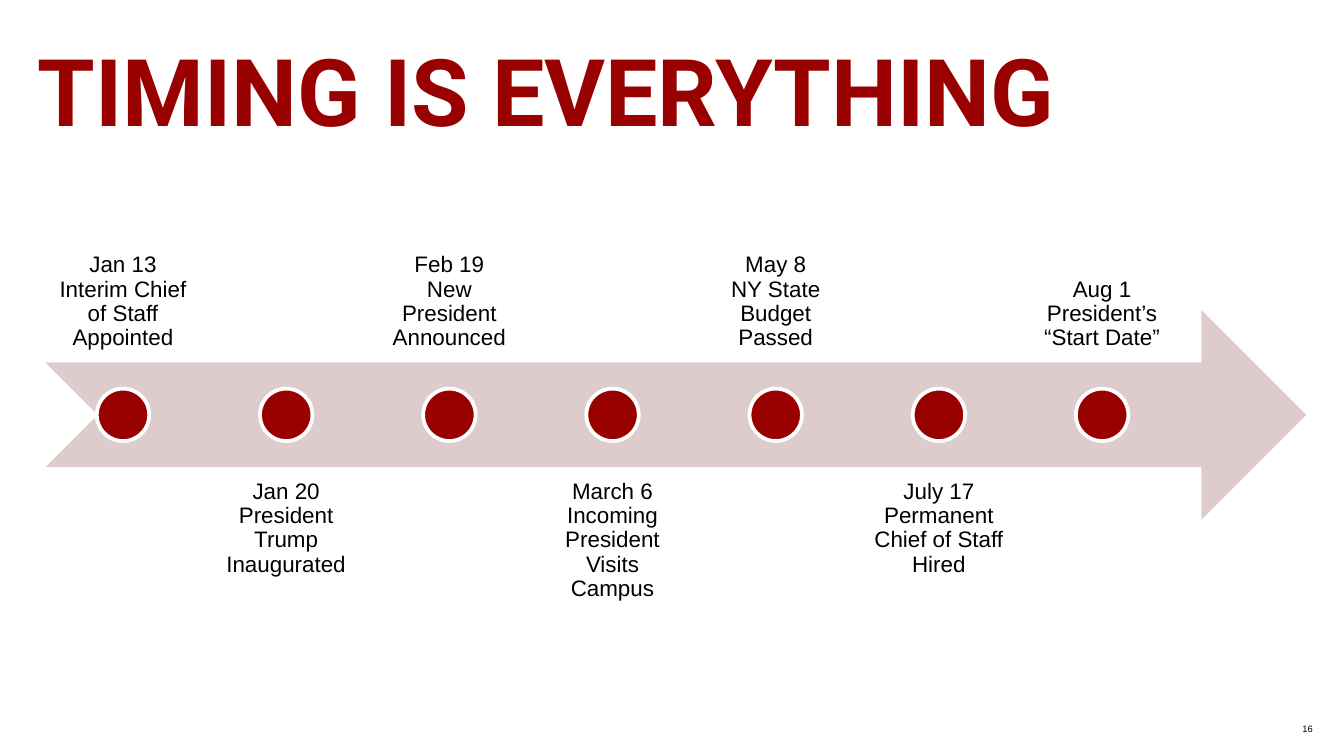
from dataclasses import dataclass
from pptx import Presentation
from pptx.dml.color import RGBColor
from pptx.enum.shapes import MSO_SHAPE
from pptx.enum.text import MSO_ANCHOR, MSO_AUTO_SIZE, PP_ALIGN
from pptx.shapes.autoshape import Shape
from pptx.slide import Slide
from pptx.util import Pt

ARROW = MSO_SHAPE.NOTCHED_RIGHT_ARROW
OVAL = MSO_SHAPE.OVAL
TOP, BOTTOM = MSO_ANCHOR.TOP, MSO_ANCHOR.BOTTOM
LEFT, CENTER = PP_ALIGN.LEFT, PP_ALIGN.CENTER
FIXED = MSO_AUTO_SIZE.NONE

COLORS = {"red": "990000", "band": "DECCCC", "white": "FFFFFF", "black": "000000"}

START, STEP = 24.15, 87.42
WIDTH, HEIGHT = 83.5, 112.3
UPPER, LOWER = 82.1, 250.6
DOT, DOT_TOP = 28.1, 208.2


@dataclass
class Event:
    date: str
    label: str


@dataclass
class Style:
    font: str
    size: float
    color: str
    bold: bool = False
    align: PP_ALIGN = CENTER


EVENTS = [
    Event("Jan 13", "Interim Chief of Staff Appointed"),
    Event("Jan 20", "President Trump Inaugurated"),
    Event("Feb 19", "New President Announced"),
    Event("March 6", "Incoming President Visits Campus"),
    Event("May 8", "NY State Budget Passed"),
    Event("July 17", "Permanent Chief of Staff Hired"),
    Event("Aug 1", "President’s “Start Date”"),
]

TITLE = Style("Roboto", 50, "red", True, LEFT)
LABEL = Style("Arial", 12, "black")
NUMBER = Style("Arial", 5, "black")


def tint(name: str) -> RGBColor:
    return RGBColor.from_string(COLORS[name])


def write(box: Shape, lines: list[str], style: Style, anchor: MSO_ANCHOR,
          insets: tuple[float, float, float, float]) -> None:
    frame = box.text_frame
    frame.word_wrap = True
    frame.auto_size = FIXED
    frame.vertical_anchor = anchor
    frame.margin_left, frame.margin_top, frame.margin_right, frame.margin_bottom = map(Pt, insets)
    para = frame.paragraphs[0]
    para.alignment = style.align
    for index, line in enumerate(lines):
        if index:
            para.add_line_break()
        run = para.add_run()
        run.text = line
        run.font.name = style.font
        run.font.size = Pt(style.size)
        run.font.bold = style.bold
        run.font.color.rgb = tint(style.color)


def draw_shape(slide: Slide, kind: MSO_SHAPE, left: float, top: float,
               width: float, height: float, fill: str) -> Shape:
    shape = slide.shapes.add_shape(kind, Pt(left), Pt(top), Pt(width), Pt(height))
    shape.shadow.inherit = False
    shape.fill.solid()
    shape.fill.fore_color.rgb = tint(fill)
    shape.line.fill.background()
    return shape


def draw_event(slide: Slide, index: int, event: Event) -> None:
    left = START + index * STEP
    top, anchor = (LOWER, TOP) if index % 2 else (UPPER, BOTTOM)
    box = slide.shapes.add_textbox(Pt(left), Pt(top), Pt(WIDTH), Pt(HEIGHT))
    write(box, [event.date, event.label], LABEL, anchor, (6.7, 6.7, 6.7, 6.7))
    para = box.text_frame.paragraphs[0]
    para.line_spacing = 0.9
    para.space_after = Pt(4.2)
    dot = draw_shape(slide, OVAL, left + (WIDTH - DOT) / 2, DOT_TOP, DOT, DOT, "red")
    dot.line.color.rgb = tint("white")
    dot.line.width = Pt(2)


def main() -> None:
    deck = Presentation()
    deck.slide_width, deck.slide_height = Pt(720), Pt(405)
    slide = deck.slides.add_slide(deck.slide_layouts[5])

    title = slide.shapes.title
    title.left, title.top, title.width, title.height = Pt(20.2), Pt(8.6), Pt(684.7), Pt(72.7)
    write(title, ["TIMING IS EVERYTHING"], TITLE, BOTTOM, (0, 3.6, 7.2, 3.6))

    draw_shape(slide, ARROW, 24.3, 166.1, 675.5, HEIGHT, "band")
    for index, event in enumerate(EVENTS):
        draw_event(slide, index, event)

    page = slide.shapes.add_textbox(Pt(684), Pt(385.2), Pt(33.1), Pt(9.4))
    write(page, ["16"], NUMBER, BOTTOM, (1.4, 1.4, 1.4, 1.4))
    deck.save("out.pptx")


if __name__ == "__main__":
    main()
